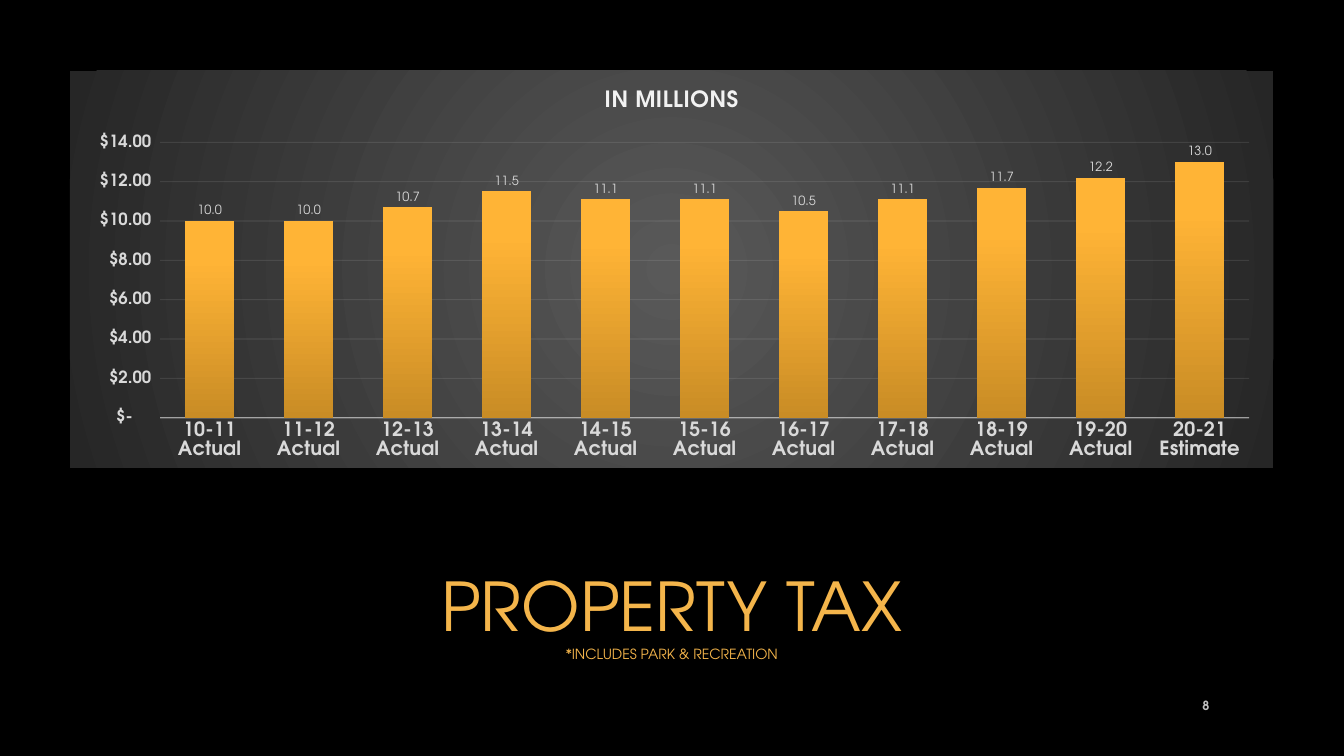
from lxml.etree import SubElement
from pptx import Presentation
from pptx.chart.data import CategoryChartData
from pptx.dml.color import RGBColor
from pptx.enum.chart import XL_CHART_TYPE, XL_LABEL_POSITION, XL_TICK_MARK
from pptx.enum.text import MSO_ANCHOR, PP_ALIGN
from pptx.oxml import parse_xml
from pptx.oxml.ns import nsdecls, qn
from pptx.util import Cm, Pt

FONT = "TeX Gyre Adventor"
COLORS = {
    "background": "000000", "title": "F4B54B", "label": "D9D9D9",
    "line": "F2F2F2", "page": "BFBFBF", "white": "FFFFFF",
    "panel_inner": "595959", "panel_outer": "262626",
    "bar_bottom": "C98C25", "bar_middle": "FFB436", "bar_top": "FFB538",
}


def style(font, size, color, bold=False):
    font.name, font.size, font.bold = FONT, Pt(size), bold
    font.color.rgb = RGBColor.from_string(COLORS[color])


def gradient(stops, direction):
    """Return a gradient fill from (percent, color name) pairs."""
    marks = "".join(f'<a:gs pos="{percent * 1000}"><a:srgbClr val="{COLORS[color]}"/></a:gs>'
                    for percent, color in stops)
    return parse_xml(f'<a:gradFill {nsdecls("a")} rotWithShape="1">'
                     f'<a:gsLst>{marks}</a:gsLst>{direction}</a:gradFill>')


prs = Presentation()
prs.slide_width, prs.slide_height = Cm(33.87), Cm(19.05)
slide = prs.slides.add_slide(prs.slide_layouts[6])
slide.background.fill.solid()
slide.background.fill.fore_color.rgb = RGBColor.from_string(COLORS["background"])

# Chart data: ten actual fiscal years and one estimate
revenue = [10, 10, 10.7, 11.5, 11.1, 11.1, 10.5, 11.1, 11.7, 12.2, 13]
chart_data = CategoryChartData()
chart_data.categories = [f"{year}-{year + 1} {'Estimate' if year == 20 else 'Actual'}"
                         for year in range(10, 21)]
chart_data.add_series("Series 1", revenue)
chart = slide.shapes.add_chart(XL_CHART_TYPE.COLUMN_CLUSTERED, Cm(1.76), Cm(1.78),
                               Cm(30.33), Cm(10.01), chart_data).chart
style(chart.font, 10, "white")
chart.has_legend = False

# Chart title
chart.has_title = True
heading = chart.chart_title.text_frame
heading.text = "IN MILLIONS"
heading_run = heading.paragraphs[0].runs[0]
style(heading_run.font, 16, "line", bold=True)
heading_run.font._element.set("spc", "50")
chart.chart_title.include_in_layout = False

# Panel behind the chart
panel = parse_xml(f'<c:spPr {nsdecls("c", "a")}><a:ln><a:noFill/></a:ln></c:spPr>')
panel.insert(0, gradient(
    [(0, "panel_inner"), (100, "panel_outer")],
    '<a:path path="circle"><a:fillToRect l="50000" t="50000" r="50000" b="50000"/></a:path>'))
chart._chartSpace.find(qn("c:chart")).addnext(panel)

# Plot area position
plot_area = chart._chartSpace.find(qn("c:chart")).find(qn("c:plotArea"))
for old_layout in plot_area.findall(qn("c:layout")):
    plot_area.remove(old_layout)
layout = parse_xml(f'<c:layout {nsdecls("c")}><c:manualLayout/></c:layout>')
for tag, value in [("layoutTarget", "inner"), ("xMode", "edge"), ("yMode", "edge"),
                   ("x", "0.075"), ("y", "0.131"), ("w", "0.905"), ("h", "0.743")]:
    SubElement(layout[0], qn(f"c:{tag}")).set("val", value)
plot_area.insert(0, layout)

# Axes
years, dollars = chart.category_axis, chart.value_axis
for axis, size in [(years, 14), (dollars, 12)]:
    axis.major_tick_mark = axis.minor_tick_mark = XL_TICK_MARK.NONE
    style(axis.tick_labels.font, size, "label", bold=True)
dollars.minimum_scale, dollars.maximum_scale, dollars.major_unit = 0, 15, 2
dollars.tick_labels.number_format = (
    '_("$"* #,##0.00_);_("$"* \\(#,##0.00\\);_("$"* "-"??_);_(@_)')
dollars.tick_labels.number_format_is_linked = False
dollars.format.line.fill.background()
dollars.has_major_gridlines = True
for line, width, opacity in [(years.format.line, 1, 54),
                             (dollars.major_gridlines.format.line, 0.75, 10)]:
    line.width = Pt(width)
    line.color.rgb = RGBColor.from_string(COLORS["line"])
    for color in line._ln.iter(qn("a:srgbClr")):
        SubElement(color, qn("a:alpha")).set("val", str(opacity * 1000))

# Bars and their values
plot = chart.plots[0]
plot.gap_width, plot.overlap, plot.vary_by_categories = 100, -24, False
bars = plot.series[0]
bars.invert_if_negative = False
bars.format.line.fill.background()
bars._element.find(qn("c:spPr")).insert(0, gradient(
    [(0, "bar_bottom"), (80, "bar_middle"), (100, "bar_top")],
    '<a:lin ang="16200000" scaled="0"/>'))
values = bars.data_labels
values.show_value = True
values.number_format, values.number_format_is_linked = "#,##0.0", False
values.position = XL_LABEL_POSITION.OUTSIDE_END
style(values.font, 9, "label")

# Slide title with its note, and the page number
texts = [
    ("PROPERTY TAX\v*INCLUDES PARK & RECREATION", (4.88, 13.84, 24.1, 2.97),
     MSO_ANCHOR.BOTTOM, PP_ALIGN.CENTER, [(48, "title", False), (10, "title", False)]),
    ("8", (29.21, 17.27, 1.52, 1.02),
     MSO_ANCHOR.MIDDLE, PP_ALIGN.RIGHT, [(9, "page", True)]),
]
for text, place, anchor, alignment, run_styles in texts:
    frame = slide.shapes.add_textbox(*map(Cm, place)).text_frame
    frame.word_wrap, frame.vertical_anchor = True, anchor
    paragraph = frame.paragraphs[0]
    paragraph.text, paragraph.alignment = text, alignment
    for run, (size, color, bold) in zip(paragraph.runs, run_styles):
        style(run.font, size, color, bold)
        if color == "title":
            run.font._element.find(qn("a:solidFill")).addnext(parse_xml(
                f'<a:effectLst {nsdecls("a")}><a:outerShdw blurRad="38100" dist="25400" '
                'dir="2700000"><a:srgbClr val="000000"><a:alpha val="60000"/></a:srgbClr>'
                '</a:outerShdw></a:effectLst>'))

prs.save("out.pptx")
